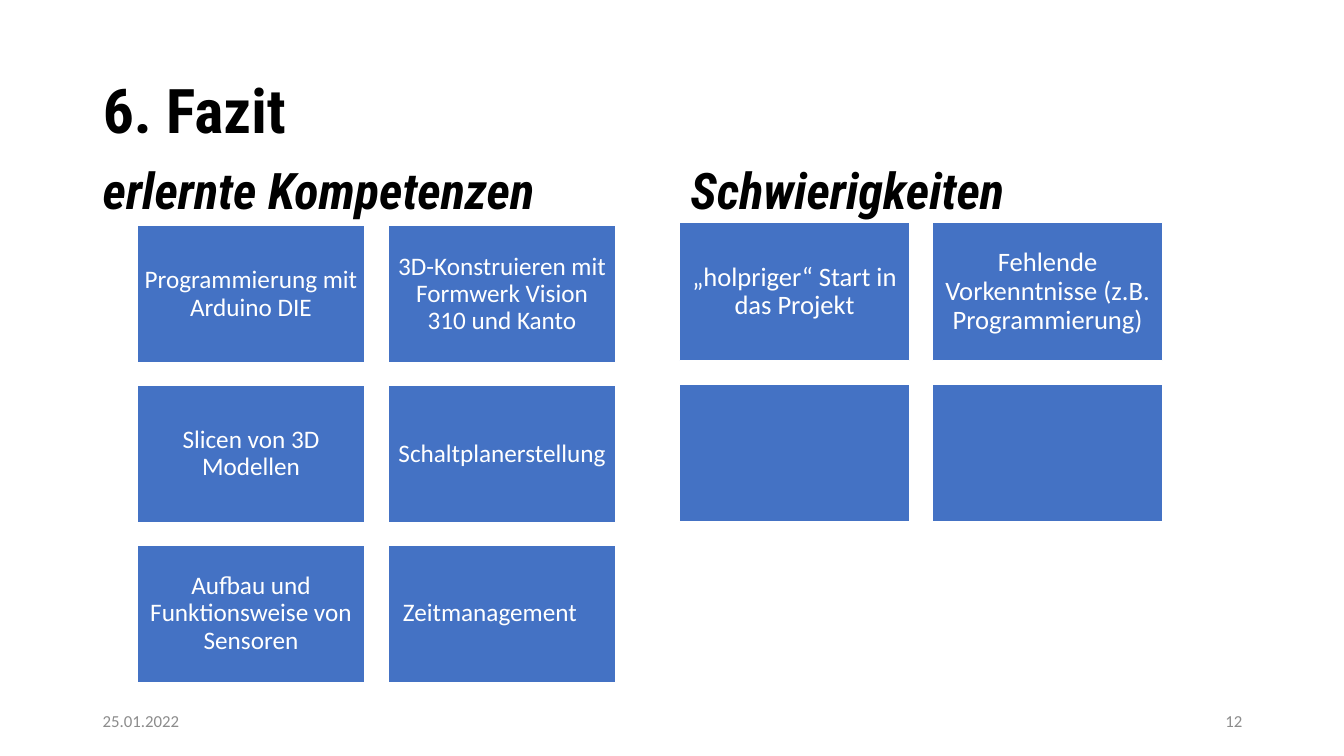
from pptx import Presentation
from pptx.dml.color import RGBColor
from pptx.enum.shapes import MSO_SHAPE
from pptx.enum.text import MSO_ANCHOR, MSO_AUTO_SIZE, PP_ALIGN
from pptx.util import Inches, Pt

RECTANGLE = MSO_SHAPE.RECTANGLE
MIDDLE, BOTTOM = MSO_ANCHOR.MIDDLE, MSO_ANCHOR.BOTTOM
LEFT, CENTER, RIGHT = PP_ALIGN.LEFT, PP_ALIGN.CENTER, PP_ALIGN.RIGHT
NO_AUTOFIT = MSO_AUTO_SIZE.NONE

COLORS = {"card": "4472C4", "white": "FFFFFF", "heading": "000000", "footer": "8C8C8C"}
HEADING_FONT = "Roboto Condensed"
BODY_FONT = "Calibri"

SKILLS = [
    "Programmierung mit Arduino DIE",
    "3D-Konstruieren mit Formwerk Vision 310 und Kanto",
    "Slicen von 3D Modellen",
    "Schaltplanerstellung",
    "Aufbau und Funktionsweise von Sensoren",
    "Zeitmanagement",
]
DIFFICULTIES = [
    "„holpriger“ Start in das Projekt",
    "Fehlende Vorkenntnisse (z.B. Programmierung)",
    "",
    "",
]


def color(name):
    return RGBColor.from_string(COLORS[name])


def write(shape, text, *, size, ink, font=BODY_FONT, bold=False, italic=False,
          align=LEFT, anchor=MIDDLE, spacing=0.9, inset=None):
    frame = shape.text_frame
    frame.word_wrap = True
    frame.auto_size = NO_AUTOFIT
    frame.vertical_anchor = anchor
    if inset is not None:
        frame.margin_left = frame.margin_right = Inches(inset)
        frame.margin_top = frame.margin_bottom = Inches(inset)
    frame.text = text
    paragraph = frame.paragraphs[0]
    paragraph.alignment = align
    paragraph.line_spacing = spacing
    paragraph.font.name = font
    paragraph.font.size = Pt(size)
    paragraph.font.bold = bold
    paragraph.font.italic = italic
    paragraph.font.color.rgb = color(ink)


def add_title(slide, text):
    title = slide.shapes.title
    title.left, title.top = Inches(0.92), Inches(0.4)
    title.width, title.height = Inches(11.5), Inches(1.45)
    write(title, text, size=44, ink="heading", font=HEADING_FONT, bold=True)


def add_label(slide, text, left, top, width, height, **text_format):
    label = slide.shapes.add_textbox(Inches(left), Inches(top), Inches(width), Inches(height))
    write(label, text, **text_format)


def add_heading(slide, text, left, width):
    add_label(slide, text, left, 1.34, width, 0.9, size=36, ink="heading",
              font=HEADING_FONT, bold=True, italic=True, anchor=BOTTOM)


def add_footer(slide, text, left, align):
    add_label(slide, text, left, 6.95, 3, 0.4, size=12, ink="footer", align=align, spacing=1.0)


def add_card(slide, text, left, top, width, height, size, inset):
    card = slide.shapes.add_shape(RECTANGLE, Inches(left), Inches(top),
                                  Inches(width), Inches(height))
    card.shadow.inherit = False
    card.fill.solid()
    card.fill.fore_color.rgb = color("card")
    card.line.color.rgb = color("white")
    card.line.width = Pt(1)
    if text:
        write(card, text, size=size, ink="white", align=CENTER, inset=inset)
    return card


def add_card_grid(slide, texts, left, top, width, height, pitch_x, pitch_y, size, inset):
    cards = []
    for index, text in enumerate(texts):
        row, column = divmod(index, 2)
        cards.append(add_card(slide, text, left + column * pitch_x, top + row * pitch_y,
                              width, height, size, inset))
    return cards


def main():
    presentation = Presentation()
    presentation.slide_width, presentation.slide_height = Inches(13.33), Inches(7.5)
    slide = presentation.slides.add_slide(presentation.slide_layouts[5])

    add_title(slide, "6. Fazit")
    add_heading(slide, "erlernte Kompetenzen", 0.92, 5.64)
    skill_cards = add_card_grid(slide, SKILLS, left=1.36, top=2.24, width=2.26, height=1.36,
                                pitch_x=2.49, pitch_y=1.585, size=18, inset=0.07)
    skill_cards[-1].text_frame.margin_right = Inches(0.31)
    add_heading(slide, "Schwierigkeiten", 6.75, 5.67)
    add_card_grid(slide, DIFFICULTIES, left=6.74, top=2.21, width=2.28, height=1.37,
                  pitch_x=2.51, pitch_y=1.6, size=19, inset=0.08)
    add_footer(slide, "25.01.2022", 0.92, LEFT)
    add_footer(slide, "12", 9.42, RIGHT)

    presentation.save("out.pptx")


if __name__ == "__main__":
    main()
